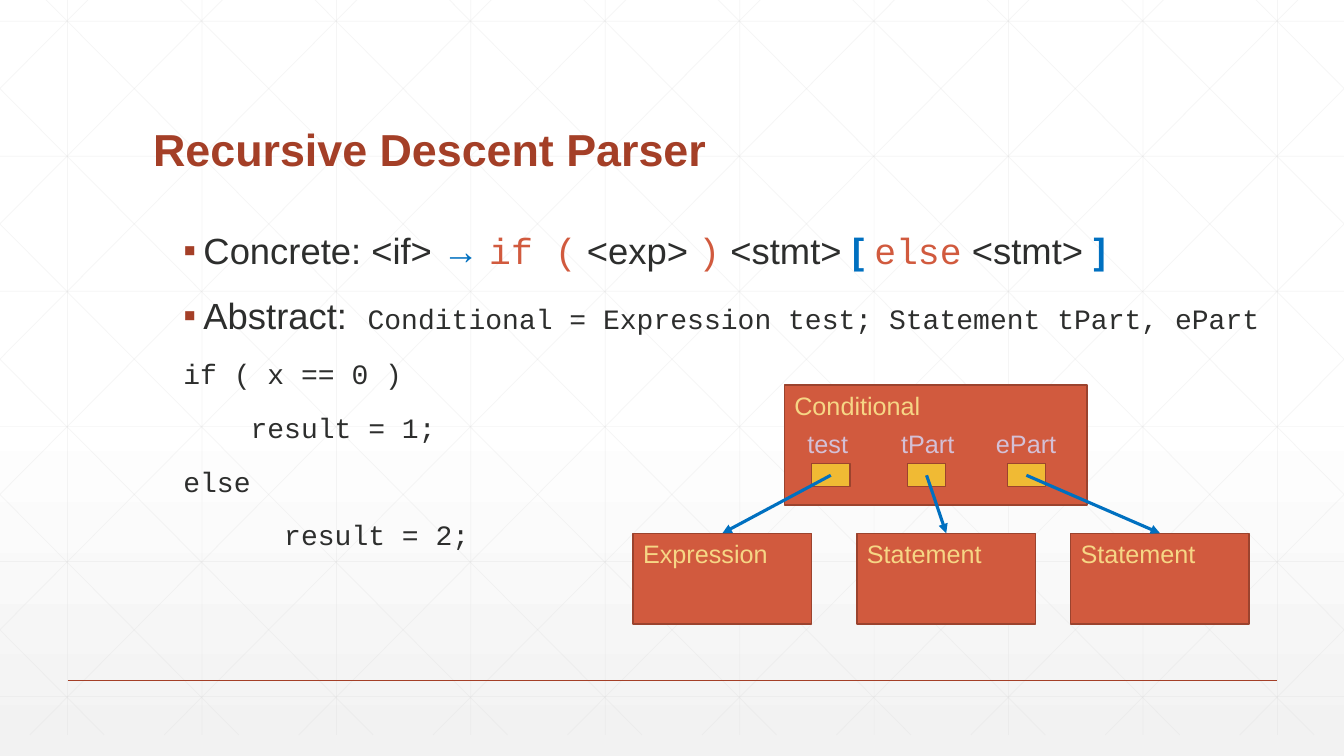
import pptx
import pptx.util
import pptx.dml.color
import pptx.enum.dml
import pptx.enum.shapes
import pptx.enum.text
import pptx.oxml
import pptx.oxml.ns
from lxml import etree
from dataclasses import dataclass

Inches = pptx.util.Inches
Pt = pptx.util.Pt


@dataclass(frozen=True)
class Theme:
    sans: str = "Arial"
    mono: str = "Courier New"
    dark_red: str = "A43F27"
    red: str = "D15A3E"
    border: str = "9B432E"
    gold: str = "F0BA34"
    cream: str = "F6D685"
    lilac: str = "D4C0D6"
    blue: str = "0070C0"
    ink: str = "2D2E2D"
    grid: str = "D9D9D9"
    white: str = "FFFFFF"
    haze: str = "F2F2F2"
    title_size: int = 32
    body_size: int = 26
    code_size: int = 20
    node_size: int = 18


THEME = Theme()
STYLES = {
    "title": (THEME.sans, THEME.title_size, THEME.dark_red, True),
    "text": (THEME.sans, THEME.body_size, THEME.ink, False),
    "meta": (THEME.sans, THEME.body_size, THEME.blue, True),
    "token": (THEME.mono, THEME.body_size, THEME.red, False),
    "code": (THEME.mono, THEME.code_size, THEME.ink, False),
    "node": (THEME.sans, THEME.node_size, THEME.cream, False),
    "field": (THEME.sans, THEME.node_size, THEME.lilac, False),
}

TITLE = "Recursive Descent Parser"
RULES = [
    [("Concrete: <if> ", "text"), ("→ ", "meta"), ("if (", "token"), (" <exp> ", "text"),
     (")", "token"), (" <stmt> ", "text"), ("[ ", "meta"), ("else", "token"),
     (" <stmt> ", "text"), ("]", "meta")],
    [("Abstract:  ", "text"),
     ("Conditional = Expression test; Statement tPart, ePart", "code")],
]
CODE = ["if ( x == 0 )", "    result = 1;", "else", "      result = 2;"]
PARENT = "Conditional"
FIELDS = [
    ("test", 0.13, 8.05, "Expression", 6.28),
    ("tPart", 1.06, 9, "Statement", 8.5),
    ("ePart", 2, 9.99, "Statement", 10.62),
]

WIDTH, HEIGHT = 13.33, 7.5
GRID_TOP, GRID_BOTTOM = -0.21, 7.29
GRID_STEP = 4 / 3
DIAGONAL_RUN = 7.45
FIELD_TOP, FIELD_WIDTH, FIELD_HEIGHT = 4.6, 0.38, 0.23
CHILD_TOP, CHILD_WIDTH, CHILD_HEIGHT = 5.29, 1.77, 0.9


def rgb(value):
    return pptx.dml.color.RGBColor.from_string(value)


def add_element(parent, tag, **attributes):
    return etree.SubElement(parent, pptx.oxml.ns.qn(tag), **attributes)


def add_line(page, start, end, color, weight, alpha=None, arrow=False):
    line = page.shapes.add_connector(
        pptx.enum.shapes.MSO_CONNECTOR.STRAIGHT, *(Inches(n) for n in (*start, *end)))
    line.line.color.rgb = rgb(color)
    line.line.width = Pt(weight)
    outline = line.line._get_or_add_ln()
    if alpha:
        add_element(outline.find(".//" + pptx.oxml.ns.qn("a:srgbClr")), "a:alpha", val=str(alpha * 1000))
    if arrow:
        add_element(outline, "a:tailEnd", type="triangle")
    add_element(line._element.spPr, "a:effectLst")
    return line


def add_runs(para, runs):
    for text, style in runs:
        span = para.add_run()
        span.text = text
        span.font.name, size, color, span.font.bold = STYLES[style]
        span.font.size = Pt(size)
        span.font.color.rgb = rgb(color)


def next_para(frame, first):
    return frame.paragraphs[0] if first else frame.add_paragraph()


def add_text_box(page, left, top, width, height):
    frame = page.shapes.add_textbox(*(Inches(n) for n in (left, top, width, height))).text_frame
    frame.word_wrap = True
    return frame


def add_box(page, left, top, width, height, fill, lines=()):
    box = page.shapes.add_shape(
        pptx.enum.shapes.MSO_SHAPE.RECTANGLE, *(Inches(n) for n in (left, top, width, height)))
    box.shadow.inherit = False
    box.fill.solid()
    box.fill.fore_color.rgb = rgb(fill)
    box.line.color.rgb = rgb(THEME.border)
    box.line.width = Pt(1)
    box.text_frame.vertical_anchor = pptx.enum.text.MSO_ANCHOR.TOP
    for index, runs in enumerate(lines):
        para = next_para(box.text_frame, index == 0)
        para.alignment = pptx.enum.text.PP_ALIGN.LEFT
        para.space_after = Pt(6)
        add_runs(para, runs)
    return box


def draw_background(page):
    fill = page.background.fill
    fill.gradient()
    fill.gradient_angle = 270
    for stop, position, color in zip(fill.gradient_stops, (0.53, 1), (THEME.white, THEME.haze)):
        stop.position = position
        stop.color.rgb = rgb(color)

    segments = []
    for index in range(10):
        x = 0.67 + index * GRID_STEP
        segments.append(((x, GRID_TOP), (x, GRID_BOTTOM)))
    for index in range(6):
        y = 0.21 + index * 1.34
        segments.append(((0, y), (WIDTH, y)))
    slope = (GRID_BOTTOM - GRID_TOP) / DIAGONAL_RUN
    for index in range(-5, 10):
        origin = 0.25 + index * GRID_STEP
        left, right = max(origin, 0), min(origin + DIAGONAL_RUN, WIDTH)
        top, bottom = (GRID_TOP + (x - origin) * slope for x in (left, right))
        segments.append(((left, top), (right, bottom)))
        segments.append(((WIDTH - left, top), (WIDTH - right, bottom)))
    for start, end in segments:
        add_line(page, start, end, THEME.grid, 0.5, alpha=25)
    add_line(page, (0.67, 6.75), (12.67, 6.75), THEME.dark_red, 1)


def draw_text(page):
    title = add_text_box(page, 1.42, 0.55, 10.5, 1.25)
    title.vertical_anchor = pptx.enum.text.MSO_ANCHOR.BOTTOM
    title.paragraphs[0].line_spacing = 0.9
    add_runs(title.paragraphs[0], [(TITLE, "title")])

    body = add_text_box(page, 1.42, 2.17, 11.33, 4.49)
    lines = [(runs, True) for runs in RULES] + [([(line, "code")], False) for line in CODE]
    for index, (runs, bulleted) in enumerate(lines):
        para = next_para(body, index == 0)
        para.line_spacing = 1.1
        para.space_before = Pt(12 if index else 0)
        layout = para._p.get_or_add_pPr()
        layout.set("marL", str(Inches(0.5 if bulleted else 0.3)))
        layout.set("indent", str(Inches(-0.2 if bulleted else 0)))
        if bulleted:
            add_element(add_element(layout, "a:buClr"), "a:srgbClr", val=THEME.dark_red)
            add_element(layout, "a:buFont", typeface=THEME.sans)
            add_element(layout, "a:buChar", char="▪")
        add_runs(para, runs)


def draw_tree(page):
    labels = "".join("\t" + field[0] for field in FIELDS)
    parent = add_box(page, 7.78, 3.82, 3, 1.19, THEME.red,
                     [[(PARENT, "node")], [(labels, "field")]])
    tabs = add_element(parent.text_frame.paragraphs[1]._p.get_or_add_pPr(), "a:tabLst")
    for _, tab, *_ in FIELDS:
        add_element(tabs, "a:tab", pos=str(Inches(tab)), algn="l")
    for _, _, left, _, _ in FIELDS:
        add_box(page, left, FIELD_TOP, FIELD_WIDTH, FIELD_HEIGHT, THEME.gold)
    children = [add_box(page, left, CHILD_TOP, CHILD_WIDTH, CHILD_HEIGHT, THEME.red, [[(name, "node")]])
                for _, _, _, name, left in FIELDS]
    for (_, _, left, _, child_left), child in zip(FIELDS, children):
        start = (left + FIELD_WIDTH / 2, FIELD_TOP + FIELD_HEIGHT / 2)
        end = (child_left + CHILD_WIDTH / 2, CHILD_TOP)
        arrow = add_line(page, start, end, THEME.blue, 2.25, arrow=True)
        arrow.end_connect(child, 0)


def main():
    deck = pptx.Presentation()
    deck.slide_width, deck.slide_height = Inches(WIDTH), Inches(HEIGHT)
    page = deck.slides.add_slide(deck.slide_layouts[6])
    draw_background(page)
    draw_text(page)
    draw_tree(page)
    deck.save("out.pptx")


if __name__ == "__main__":
    main()
